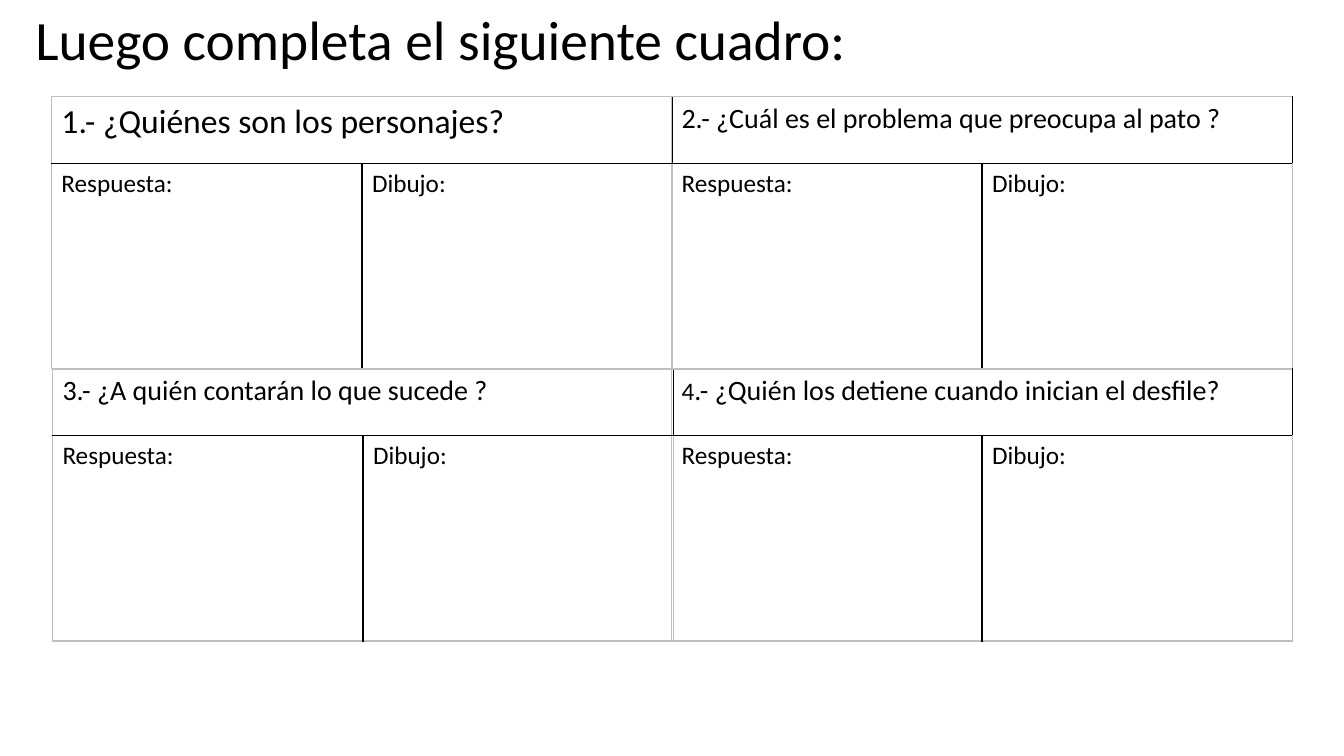
from lxml import etree
from pptx import Presentation
from pptx.dml.color import RGBColor
from pptx.enum.text import MSO_ANCHOR, PP_ALIGN
from pptx.oxml.ns import qn
from pptx.util import Inches, Pt

MIDDLE = MSO_ANCHOR.MIDDLE
LEFT = PP_ALIGN.LEFT
FONT = "Calibri"
COLORS = {"ink": "000000", "edge": "BFBFBF"}

TITLE = "Luego completa el siguiente cuadro:"
LABELS = ["Respuesta:", "Dibujo:"]
CARDS = [
    (0.51, 0.96, [("1.- ¿Quiénes son los personajes?", 24)]),
    (6.66, 0.96, [("2.- ¿Cuál es el problema que preocupa al pato ?", 20)]),
    (0.52, 3.66, [("3.- ¿A quién contarán lo que sucede ?", 20)]),
    (6.66, 3.66, [("4", 18),
                  (".- ¿Quién los detiene cuando inician el desfile?", 20)]),
]
COL = 3.08
ROWS = [0.66, 2.04]


def style(run, size):
    run.font.name = FONT
    run.font.size = Pt(size)
    run.font.color.rgb = RGBColor.from_string(COLORS["ink"])


def write(cell, parts):
    para = cell.text_frame.paragraphs[0]
    for text, size in parts:
        run = para.add_run()
        run.text = text
        style(run, size)


def border(cell, sides):
    props = cell._tc.get_or_add_tcPr()
    for side, color in sides.items():
        line = etree.SubElement(props, qn(f"a:ln{side}"), w=str(Pt(1)))
        fill = etree.SubElement(line, qn("a:solidFill"))
        etree.SubElement(fill, qn("a:srgbClr"), val=COLORS[color])


def add_card(slide, left, top, parts):
    frame = slide.shapes.add_table(2, 2, Inches(left), Inches(top),
                                   Inches(2 * COL), Inches(sum(ROWS)))
    table = frame.table
    table.first_row = False
    table.horz_banding = False
    for col in table.columns:
        col.width = Inches(COL)
    for row, height in zip(table.rows, ROWS):
        row.height = Inches(height)
    table.cell(0, 0).merge(table.cell(0, 1))
    write(table.cell(0, 0), parts)
    for c, label in enumerate(LABELS):
        write(table.cell(1, c), [(label, 18)])
    for r in range(2):
        for c in range(2):
            cell = table.cell(r, c)
            border(cell, {
                "L": "ink" if c else "edge",
                "R": "edge" if c else "ink",
                "T": "ink" if r else "edge",
                "B": "edge" if r else "ink",
            })
            cell.fill.background()


def main():
    deck = Presentation()
    deck.slide_width = Inches(13.33)
    deck.slide_height = Inches(7.5)
    slide = deck.slides.add_slide(deck.slide_layouts[5])

    title = slide.shapes.title
    title.left, title.top = Inches(0.25), Inches(0.11)
    title.width, title.height = Inches(11.5), Inches(0.63)
    frame = title.text_frame
    frame.text = TITLE
    frame.vertical_anchor = MIDDLE
    para = frame.paragraphs[0]
    para.alignment = LEFT
    para.line_spacing = 0.9
    style(para.runs[0], 39.6)

    for left, top, parts in CARDS:
        add_card(slide, left, top, parts)
    deck.save("out.pptx")


if __name__ == "__main__":
    main()
